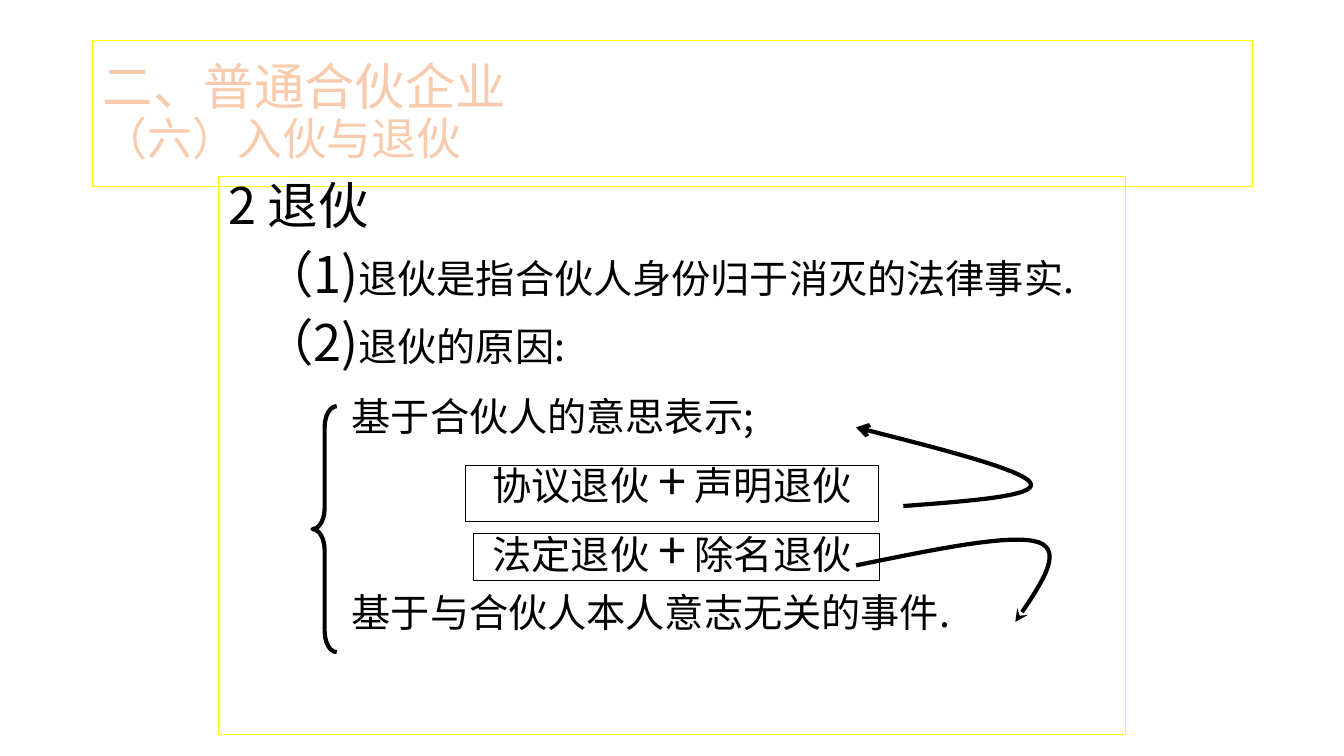
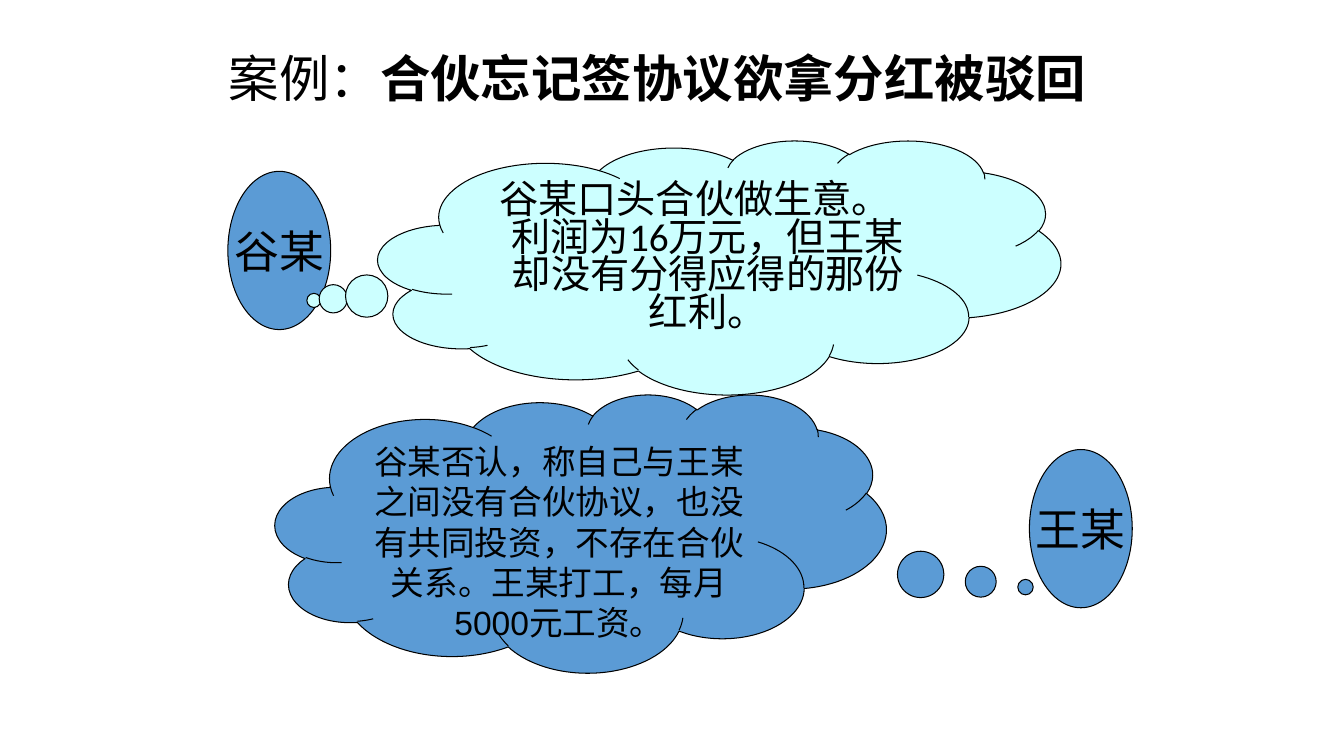
"""Build two slides on leaving a partnership and an oral partnership case."""
import pptx
import pptx.dml.color
import pptx.enum.shapes
import pptx.enum.text
import pptx.oxml.ns
import pptx.util
from lxml import etree

Inches = pptx.util.Inches
Pt = pptx.util.Pt
RGBColor = pptx.dml.color.RGBColor
MSO_SHAPE = pptx.enum.shapes.MSO_SHAPE
PP_ALIGN = pptx.enum.text.PP_ALIGN
MSO_ANCHOR = pptx.enum.text.MSO_ANCHOR
qn = pptx.oxml.ns.qn

BLACK = RGBColor(0x00, 0x00, 0x00)
YELLOW = RGBColor(0xFF, 0xFF, 0x00)
PEACH = RGBColor(0xF8, 0xCB, 0xAD)
BLUE = RGBColor(0x5B, 0x9B, 0xD5)
PALE_CYAN = RGBColor(0xCC, 0xFF, 0xFF)
CJK_FONT = "Noto Sans CJK SC"


class Deck:
    """Hold the shared style and the current slide."""

    def __init__(self):
        self.prs = pptx.Presentation()
        self.prs.slide_width = Inches(13.33)
        self.prs.slide_height = Inches(7.5)
        self.s = None

    def add_slide(self):
        self.s = self.prs.slides.add_slide(self.prs.slide_layouts[5])

    def format_line(self, sp, color=BLACK, width=0.75):
        sp.line.color.rgb = color
        sp.line.width = Pt(width)

    def format_paragraph(self, p, font, size, color=BLACK, align=PP_ALIGN.LEFT,
                         spacing=1.0, before=0, margin=0, indent=0):
        p.alignment = align
        p.line_spacing = spacing
        p.space_before = Pt(before)
        p.font.name = font
        p.font.size = Pt(size)
        p.font.color.rgb = color
        pPr = p._p.get_or_add_pPr()
        pPr.set("marL", str(Inches(margin)))
        pPr.set("indent", str(Inches(indent)))
        ea = etree.SubElement(pPr.find(qn("a:defRPr")), qn("a:ea"))
        ea.set("typeface", CJK_FONT)

    def add_run(self, p, text, size=None, bold=None):
        r = p.add_run()
        r.text = text
        if size:
            r.font.size = Pt(size)
        if bold:
            r.font.bold = True

    def title(self, box, color=BLACK):
        sp = self.s.shapes.title
        sp.left, sp.top, sp.width, sp.height = map(Inches, box)
        tf = sp.text_frame
        tf.auto_size = pptx.enum.text.MSO_AUTO_SIZE.NONE
        tf.vertical_anchor = MSO_ANCHOR.MIDDLE
        p = tf.paragraphs[0]
        self.format_paragraph(p, "Calibri", 36, color, spacing=0.9)
        return sp, p

    def body(self, box, lines):
        sp = self.s.shapes.add_textbox(*map(Inches, box))
        self.format_line(sp, YELLOW)
        tf = sp.text_frame
        tf.word_wrap = True
        for i, (runs, margin, align, before) in enumerate(lines):
            p = tf.add_paragraph() if i else tf.paragraphs[0]
            self.format_paragraph(p, CJK_FONT, 28, align=align, spacing=0.9,
                                  before=before, margin=margin)
            for text, size in runs:
                self.add_run(p, text, size)

    def shape(self, kind, box, fill=None, width=0.75, adjustments=()):
        sp = self.s.shapes.add_shape(kind, *map(Inches, box))
        sp.shadow.inherit = False
        if fill is None:
            sp.fill.background()
        else:
            sp.fill.solid()
            sp.fill.fore_color.rgb = fill
        self.format_line(sp, width=width)
        for i, value in enumerate(adjustments):
            sp.adjustments[i] = value
        return sp

    def person(self, left, top, name):
        tf = self.shape(MSO_SHAPE.OVAL, (left, top, 1.02, 1.57), BLUE).text_frame
        tf.word_wrap = False
        tf.vertical_anchor = MSO_ANCHOR.MIDDLE
        tf.text = name
        self.format_paragraph(tf.paragraphs[0], "Cabin", 32, align=PP_ALIGN.CENTER)

    def thought(self, box, fill, pointer, text, font, size, **style):
        sp = self.shape(MSO_SHAPE.CLOUD_CALLOUT, box, fill, adjustments=pointer)
        tf = sp.text_frame
        tf.word_wrap = True
        tf.vertical_anchor = MSO_ANCHOR.TOP
        tf.text = text
        self.format_paragraph(tf.paragraphs[0], font, size,
                              align=PP_ALIGN.CENTER, **style)

    def curved_arrow(self, start, curves, head, steps=16):
        points = []
        a = start
        for b, c, d in curves:
            for i in range(1, steps + 1):
                t = i / steps
                u = 1 - t
                weights = (u ** 3, 3 * u * u * t, 3 * u * t * t, t ** 3)
                points.append(tuple(
                    Inches(sum(w * v for w, v in zip(weights, values)))
                    for values in zip(a, b, c, d)))
            a = d
        builder = self.s.shapes.build_freeform(*map(Inches, start))
        builder.add_line_segments(points, close=False)
        sp = builder.convert_to_shape()
        sp.shadow.inherit = False
        sp.fill.background()
        self.format_line(sp, width=3)
        tail = etree.SubElement(sp.line._get_or_add_ln(), qn("a:tailEnd"))
        tail.set("type", head)


def withdrawal_slide(deck):
    deck.add_slide()
    sp, p = deck.title((0.92, 0.4, 11.5, 1.45), PEACH)
    deck.format_line(sp, YELLOW)
    deck.add_run(p, "二、普通合伙企业")
    p.add_line_break()
    deck.add_run(p, "（六）入伙与退伙", 32)

    left, center = PP_ALIGN.LEFT, PP_ALIGN.CENTER
    deck.body((2.17, 1.75, 8.99, 5.54), [
        ([("2 退伙", 36)], 0, left, 10),
        ([("（1)", 36), ("退伙是指合伙人身份归于消灭的法律事实.", 28)], 0.34, left, 10),
        ([("（2)", 36), ("退伙的原因:", 28)], 0.34, left, 10),
        ([("基于合伙人的意思表示;", 28)], 1.22, left, 18),
        ([("协议退伙 ", 28), ("+", 36), (" 声明退伙", 28)], 0, center, 12),
        ([("法定退伙 ", 28), ("+", 36), (" 除名退伙", 28)], 0, center, 10),
        ([("基于与合伙人本人意志无关的事件.", 28)], 1.22, left, 10),
    ])
    deck.shape(MSO_SHAPE.LEFT_BRACE, (3.1, 4.03, 0.24, 2.44), width=3,
               adjustments=(0.86, 0.5))
    for box in ((4.62, 4.62, 4.09, 0.55), (4.7, 5.29, 4.02, 0.47)):
        deck.shape(MSO_SHAPE.RECTANGLE, box)
    deck.curved_arrow((8.96, 5.02), [
        ((9.63, 4.97), (10.3, 4.92), (10.22, 4.79)),
        ((10.15, 4.66), (9.32, 4.45), (8.49, 4.24)),
    ], "arrow")
    deck.curved_arrow((8.49, 5.61), [
        ((9.27, 5.45), (10.04, 5.29), (10.3, 5.38)),
        ((10.56, 5.47), (10.31, 5.82), (10.07, 6.17)),
    ], "stealth")


def case_slide(deck):
    deck.add_slide()
    p = deck.title((2.17, 0.3, 9, 1.01))[1]
    deck.add_run(p, "案例：")
    deck.add_run(p, "合伙忘记签协议欲拿分红被驳回", bold=True)
    deck.person(2.26, 1.7, "谷某")
    deck.person(10.21, 4.46, "王某")
    deck.thought((3.75, 1.39, 6.77, 2.52), PALE_CYAN, (-0.594, 0.131),
                 "谷某口头合伙做生意。利润为16万元，但王某却没有分得应得的那份红利。",
                 "Calibri", 28, spacing=0.8, margin=0.25, indent=-0.25)
    deck.thought((2.73, 3.91, 6.06, 2.76), BLUE, (0.728, 0.194),
                 "谷某否认，称自己与王某之间没有合伙协议，也没有共同投资，"
                 "不存在合伙关系。王某打工，每月5000元工资。",
                 "Arial", 24)


def main():
    deck = Deck()
    withdrawal_slide(deck)
    case_slide(deck)
    deck.prs.save("out.pptx")


if __name__ == "__main__":
    main()
